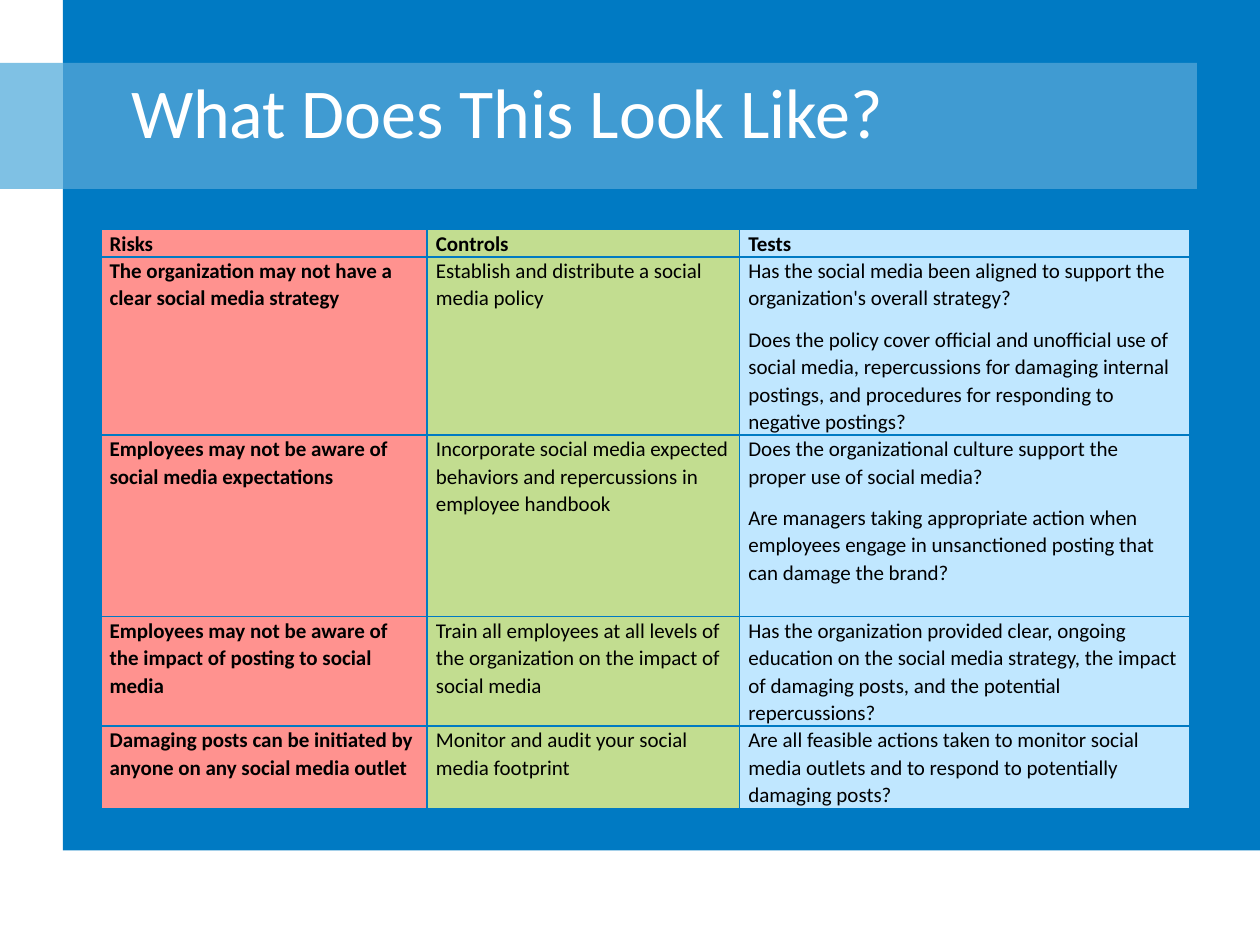
from lxml.etree import SubElement
from pptx import Presentation
from pptx.dml.color import RGBColor
from pptx.enum.shapes import MSO_SHAPE
from pptx.enum.text import MSO_ANCHOR, PP_ALIGN
from pptx.oxml.ns import qn
from pptx.util import Inches, Pt

BLUE = RGBColor(0x00, 0x7A, 0xC3)
BAND_BLUE = RGBColor(0x40, 0x9B, 0xD2)
TAB_BLUE = RGBColor(0x7F, 0xC1, 0xE4)
RISK_RED = RGBColor(0xFF, 0x92, 0x8F)
CONTROL_GREEN = RGBColor(0xC2, 0xDD, 0x90)
TEST_BLUE = RGBColor(0xC0, 0xE7, 0xFF)
WHITE = RGBColor(0xFF, 0xFF, 0xFF)
BLACK = RGBColor(0x00, 0x00, 0x00)
FONT = "Calibri"

COLUMN_WIDTHS = [2.59, 2.48, 3.57]
COLUMN_FILLS = [RISK_RED, CONTROL_GREEN, TEST_BLUE]
ROW_HEIGHTS = [0.21, 1.26, 1.44, 0.87, 0.59]

# One row per risk; a line break starts a new paragraph
ROWS = [
    ("Risks", "Controls", "Tests"),
    ("The organization may not have a clear social media strategy",
     "Establish and distribute a social media policy",
     "Has the social media been aligned to support the organization's overall strategy?\n"
     "Does the policy cover official and unofficial use of social media, repercussions "
     "for damaging internal postings, and procedures for responding to negative postings?"),
    ("Employees may not be aware of social media expectations",
     "Incorporate social media expected behaviors and repercussions in employee handbook",
     "Does the organizational culture support the proper use of social media?\n"
     "Are managers taking appropriate action when employees engage in unsanctioned "
     "posting that can damage the brand?"),
    ("Employees may not be aware of the impact of posting to social media",
     "Train all employees at all levels of the organization on the impact of social media",
     "Has the organization provided clear, ongoing education on the social media strategy, "
     "the impact of damaging posts, and the potential repercussions?"),
    ("Damaging posts can be initiated by anyone on any social media outlet",
     "Monitor and audit your social media footprint",
     "Are all feasible actions taken to monitor social media outlets and to respond to "
     "potentially damaging posts?"),
]


def add_block(slide, left, top, width, height, color):
    block = slide.shapes.add_shape(MSO_SHAPE.RECTANGLE, Inches(left), Inches(top),
                                   Inches(width), Inches(height))
    block.shadow.inherit = False
    block.fill.solid()
    block.fill.fore_color.rgb = color
    block.line.fill.background()


def set_title(slide, text):
    title = slide.shapes.title
    title.left, title.top = Inches(0.94), Inches(0.25)
    title.width, title.height = Inches(8.35), Inches(1.25)
    title.text_frame.text = text
    title.text_frame.vertical_anchor = MSO_ANCHOR.MIDDLE
    heading = title.text_frame.paragraphs[0]
    heading.alignment = PP_ALIGN.LEFT
    heading.font.name = FONT
    heading.font.size = Pt(40)
    heading.font.color.rgb = WHITE
    # Bring the title in front of the blocks
    slide.shapes._spTree.append(title._element)


def add_borders(cell, color):
    properties = cell._tc.get_or_add_tcPr()
    for side in ("a:lnL", "a:lnR", "a:lnT", "a:lnB"):
        border = SubElement(properties, qn(side), w=str(Pt(1)))
        fill = SubElement(border, qn("a:solidFill"))
        SubElement(fill, qn("a:srgbClr"), val=str(color))


def fill_cell(cell, text, color, bold, alignment):
    add_borders(cell, BLUE)
    cell.fill.solid()
    cell.fill.fore_color.rgb = color
    cell.margin_left = cell.margin_right = Inches(0.07)
    cell.margin_top = cell.margin_bottom = 0
    cell.text_frame.text = text
    for paragraph in cell.text_frame.paragraphs:
        paragraph.alignment = alignment
        paragraph.line_spacing = 1.07
        paragraph.space_after = Pt(8)
        paragraph.font.name = FONT
        paragraph.font.size = Pt(12)
        paragraph.font.bold = bold
        paragraph.font.color.rgb = BLACK


def add_risk_table(slide):
    table = slide.shapes.add_table(
        len(ROWS), len(COLUMN_WIDTHS), Inches(0.8), Inches(1.82),
        Inches(sum(COLUMN_WIDTHS)), Inches(sum(ROW_HEIGHTS))).table
    for column, width in zip(table.columns, COLUMN_WIDTHS):
        column.width = Inches(width)
    for r, (texts, height) in enumerate(zip(ROWS, ROW_HEIGHTS)):
        table.rows[r].height = Inches(height)
        alignment = PP_ALIGN.JUSTIFY if r == 0 else PP_ALIGN.LEFT
        for c, (text, color) in enumerate(zip(texts, COLUMN_FILLS)):
            fill_cell(table.cell(r, c), text, color, r == 0 or c == 0, alignment)


def main():
    prs = Presentation()
    prs.slide_width, prs.slide_height = Inches(10), Inches(7.5)
    slide = prs.slides.add_slide(prs.slide_layouts[5])

    # Backdrop, title band and the tab at its left
    add_block(slide, 0.5, 0, 9.5, 6.75, BLUE)
    add_block(slide, 0.5, 0.5, 9, 1, BAND_BLUE)
    add_block(slide, 0, 0.5, 0.5, 1, TAB_BLUE)

    set_title(slide, "What Does This Look Like?")
    add_risk_table(slide)
    prs.save("out.pptx")


if __name__ == "__main__":
    main()
